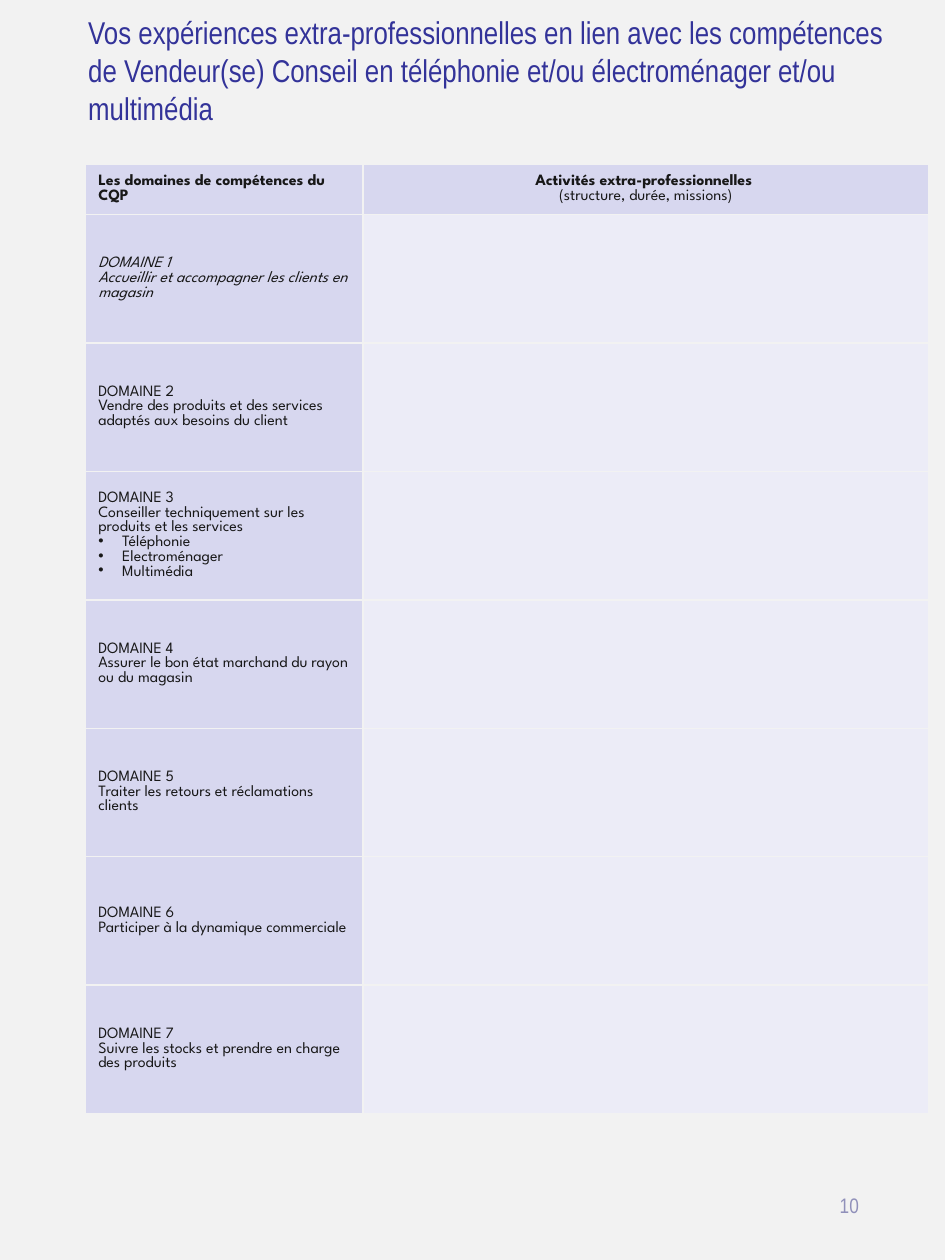
from dataclasses import dataclass

import pptx
import pptx.dml.color
import pptx.enum.text
import pptx.oxml
import pptx.oxml.ns
import pptx.util
from pptx.util import Inches

TITLE_FONT = "Arial Narrow"
TABLE_FONT = "League Spartan"
BACKGROUND = "F2F2F2"
TITLE_COLOUR = "333399"
NUMBER_COLOUR = "9090BA"
TEXT_COLOUR = "181818"
HEADING_FILL = "D7D7EF"
ANSWER_FILL = "ECECF7"

LEFT = pptx.enum.text.PP_ALIGN.LEFT
CENTER = pptx.enum.text.PP_ALIGN.CENTER
MIDDLE = pptx.enum.text.MSO_ANCHOR.MIDDLE


@dataclass
class Line:
    text: str
    bold: bool = False
    italic: bool = False
    bullet: bool = False
    align: pptx.enum.text.PP_ALIGN = LEFT


HEADER = (
    [Line("Les domaines de compétences du CQP", bold=True)],
    [
        Line("Activités extra-professionnelles ", bold=True, align=CENTER),
        Line("(structure, durée, missions)", align=CENTER),
    ],
)
DOMAINS = [
    [Line("DOMAINE 1\nAccueillir et accompagner les clients en magasin", italic=True)],
    [Line("DOMAINE 2"), Line("Vendre des produits et des services adaptés aux besoins du client")],
    [
        Line("DOMAINE 3\nConseiller techniquement sur les produits et les services"),
        Line("Téléphonie", bullet=True),
        Line("Electroménager", bullet=True),
        Line("Multimédia", bullet=True),
    ],
    [Line("DOMAINE 4\nAssurer le bon état marchand du rayon ou du magasin")],
    [Line("DOMAINE 5"), Line("Traiter les retours et réclamations clients")],
    [Line("DOMAINE 6"), Line("Participer à la dynamique commerciale")],
    [Line("DOMAINE 7"), Line("Suivre les stocks et prendre en charge des produits")],
]


def colour(value: str) -> pptx.dml.color.RGBColor:
    return pptx.dml.color.RGBColor.from_string(value)


def set_font(font, name: str, size: float, value: str) -> None:
    font.name = name
    font.size = pptx.util.Pt(size)
    font.color.rgb = colour(value)


def add_bullet(paragraph) -> None:
    properties = paragraph._p.get_or_add_pPr()
    indent = Inches(0.19)
    properties.set("marL", str(indent))
    properties.set("indent", str(-indent))
    bullet = pptx.oxml.parse_xml(f'<a:buChar {pptx.oxml.ns.nsdecls("a")} char="•"/>')
    properties.append(bullet)


def set_borders(cell) -> None:
    properties = cell._tc.get_or_add_tcPr()
    for index, side in enumerate(("lnL", "lnR", "lnT", "lnB")):
        border = pptx.oxml.parse_xml(
            f'<a:{side} {pptx.oxml.ns.nsdecls("a")} w="{pptx.util.Pt(1)}">'
            f'<a:solidFill><a:srgbClr val="{BACKGROUND}"/></a:solidFill></a:{side}>'
        )
        properties.insert(index, border)


def fill_cell(cell, lines: list[Line], fill: str) -> None:
    cell.fill.solid()
    cell.fill.fore_color.rgb = colour(fill)
    cell.vertical_anchor = MIDDLE
    set_borders(cell)
    frame = cell.text_frame
    for index, line in enumerate(lines):
        paragraph = frame.add_paragraph() if index else frame.paragraphs[0]
        paragraph.text = line.text
        paragraph.alignment = line.align
        if line.bullet:
            add_bullet(paragraph)
        set_font(paragraph.font, TABLE_FONT, 9, TEXT_COLOUR)
        paragraph.font.bold = line.bold
        paragraph.font.italic = line.italic


def add_title(page) -> None:
    title = page.shapes.title
    title.left, title.top = Inches(0.6), Inches(0.2)
    title.width, title.height = Inches(6.75), Inches(0.71)
    frame = title.text_frame
    frame.text = (
        "Vos expériences extra-professionnelles en lien avec les compétences "
        "de Vendeur(se) Conseil en téléphonie et/ou électroménager et/ou multimédia"
    )
    frame.word_wrap = True
    frame.auto_size = pptx.enum.text.MSO_AUTO_SIZE.NONE
    frame.vertical_anchor = MIDDLE
    paragraph = frame.paragraphs[0]
    paragraph.alignment = LEFT
    set_font(paragraph.font, TITLE_FONT, 18, TITLE_COLOUR)


def add_page_number(page) -> None:
    box = page.shapes.add_textbox(Inches(6.53), Inches(9.3), Inches(0.42), Inches(0.53))
    frame = box.text_frame
    frame.text = "10"
    frame.word_wrap = True
    frame.margin_left = frame.margin_right = 0
    frame.vertical_anchor = MIDDLE
    paragraph = frame.paragraphs[0]
    paragraph.alignment = CENTER
    set_font(paragraph.font, TITLE_FONT, 12, NUMBER_COLOUR)


def add_domain_table(page) -> None:
    table = page.shapes.add_table(
        len(DOMAINS) + 1, 2, Inches(0.68), Inches(1.3), Inches(6.69), Inches(7.57)
    ).table
    table.first_row = False
    table.horz_banding = False
    for column, width in zip(table.columns, (2.2, 4.49)):
        column.width = Inches(width)
    table.rows[0].height = Inches(0.4)
    for column, lines in enumerate(HEADER):
        fill_cell(table.cell(0, column), lines, HEADING_FILL)
    for row, lines in enumerate(DOMAINS, start=1):
        table.rows[row].height = Inches(1.02)
        fill_cell(table.cell(row, 0), lines, HEADING_FILL)
        fill_cell(table.cell(row, 1), [], ANSWER_FILL)


def main() -> None:
    deck = pptx.Presentation()
    deck.slide_width, deck.slide_height = Inches(7.5), Inches(10)
    page = deck.slides.add_slide(deck.slide_layouts.get_by_name("Title Only"))
    page.background.fill.solid()
    page.background.fill.fore_color.rgb = colour(BACKGROUND)
    add_title(page)
    add_page_number(page)
    add_domain_table(page)
    deck.save("out.pptx")


if __name__ == "__main__":
    main()
